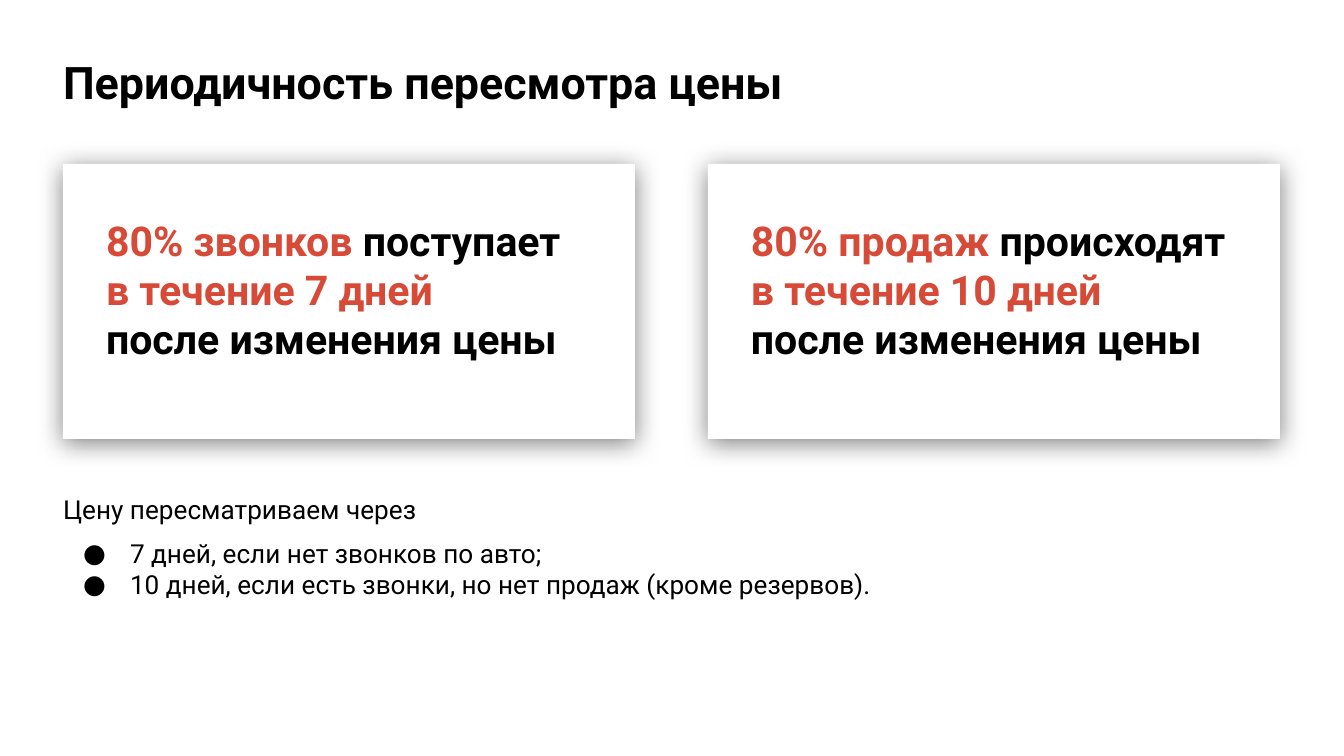
from lxml.etree import SubElement
from pptx import Presentation
from pptx.dml.color import RGBColor
from pptx.enum.shapes import MSO_SHAPE as Shape
from pptx.enum.text import MSO_ANCHOR as Anchor, MSO_AUTO_SIZE as AutoSize, PP_ALIGN as Align
from pptx.oxml.ns import qn
from pptx.util import Emu, Pt

BLACK, RED, WHITE = "000000", "D84A38", "FFFFFF"
FONT = "Roboto"

TITLE = [[("Периодичность пересмотра цены", BLACK)]]
CARDS = [
    [
        [("80% звонков", RED), (" поступает ", BLACK), ("в течение 7 дней", RED)],
        [("после изменения цены", BLACK)],
    ],
    [
        [("80% продаж", RED), (" происходят ", BLACK), ("в течение 10 дней", RED)],
        [("после изменения цены", BLACK)],
    ],
]
INTRO = "Цену пересматриваем через"
RULES = [
    "7 дней, если нет звонков по авто;",
    "10 дней, если есть звонки, но нет продаж (кроме резервов).",
]

SLIDE_SIZE = (1344, 756)
TITLE_BOX = (50, 30, 1008, 95)
CARD_LEFT, CARD_TOP, CARD_WIDTH, CARD_HEIGHT, CARD_STEP = 63, 164, 572, 275, 645
CARD_TEXT_LEFT, CARD_TEXT_TOP, CARD_TEXT_WIDTH, CARD_TEXT_HEIGHT = 30, 38, 513, 219
RULES_BOX = (50, 480, 1176, 191)
INSET = 13
BULLET_MARGIN, BULLET_HANG = 67, 47


def px(value):
    return Emu(round(value * 914400 / 134.4))


def color(value):
    return RGBColor.from_string(value)


def place(shape, box):
    shape.left, shape.top, shape.width, shape.height = map(px, box)


def write(shape, paragraphs, size, bold=True):
    frame = shape.text_frame
    frame.word_wrap = True
    frame.auto_size = AutoSize.NONE
    frame.margin_left = frame.margin_right = px(INSET)
    frame.margin_top = frame.margin_bottom = px(INSET)
    for index, runs in enumerate(paragraphs):
        paragraph = frame.add_paragraph() if index else frame.paragraphs[0]
        paragraph.alignment = Align.LEFT
        paragraph.font.name = FONT
        paragraph.font.size = Pt(size)
        paragraph.font.bold = bold
        for text, run_color in runs:
            run = paragraph.add_run()
            run.text = text
            run.font.color.rgb = color(run_color)
    return frame


def add_text(slide, box, paragraphs, size, bold=True):
    shape = slide.shapes.add_textbox(*map(px, box))
    return write(shape, paragraphs, size, bold)


def add_shadow(shape):
    shape.shadow.inherit = False
    effects = shape._element.spPr.find(qn("a:effectLst"))
    shadow = SubElement(effects, qn("a:outerShdw"), blurRad=str(Pt(13.5)),
                        dist=str(Pt(2.2)), dir="5400000", algn="bl", rotWithShape="0")
    shade = SubElement(shadow, qn("a:srgbClr"), val=BLACK)
    SubElement(shade, qn("a:alpha"), val="50000")


def add_bullet(paragraph):
    properties = paragraph._p.get_or_add_pPr()
    properties.set("marL", str(px(BULLET_MARGIN)))
    properties.set("indent", str(-px(BULLET_HANG)))
    defaults = properties.find(qn("a:defRPr"))
    for tag, attributes in [("a:buSzPts", {"val": "1400"}),
                            ("a:buFont", {"typeface": FONT}),
                            ("a:buChar", {"char": "●"})]:
        defaults.addprevious(SubElement(properties, qn(tag), attributes))


def add_card(slide, left, paragraphs):
    card = slide.shapes.add_shape(
        Shape.RECTANGLE, *map(px, (left, CARD_TOP, CARD_WIDTH, CARD_HEIGHT)))
    card.fill.solid()
    card.fill.fore_color.rgb = color(WHITE)
    card.line.fill.background()
    add_shadow(card)
    text_box = (left + CARD_TEXT_LEFT, CARD_TOP + CARD_TEXT_TOP,
                CARD_TEXT_WIDTH, CARD_TEXT_HEIGHT)
    add_text(slide, text_box, paragraphs, 22)


def main():
    presentation = Presentation()
    presentation.slide_width, presentation.slide_height = map(px, SLIDE_SIZE)
    slide = presentation.slides.add_slide(presentation.slide_layouts[5])

    title = slide.shapes.title
    place(title, TITLE_BOX)
    title_frame = write(title, TITLE, 24)
    title_frame.vertical_anchor = Anchor.MIDDLE
    title_frame.paragraphs[0].line_spacing = 1.15

    for index, paragraphs in enumerate(CARDS):
        add_card(slide, CARD_LEFT + index * CARD_STEP, paragraphs)

    lines = [[(text, BLACK)] for text in [INTRO, *RULES]]
    rules_frame = add_text(slide, RULES_BOX, lines, 14, bold=False)
    intro, *rules = rules_frame.paragraphs
    intro.space_after = Pt(7)
    for paragraph in rules:
        add_bullet(paragraph)

    presentation.save("out.pptx")


if __name__ == "__main__":
    main()
